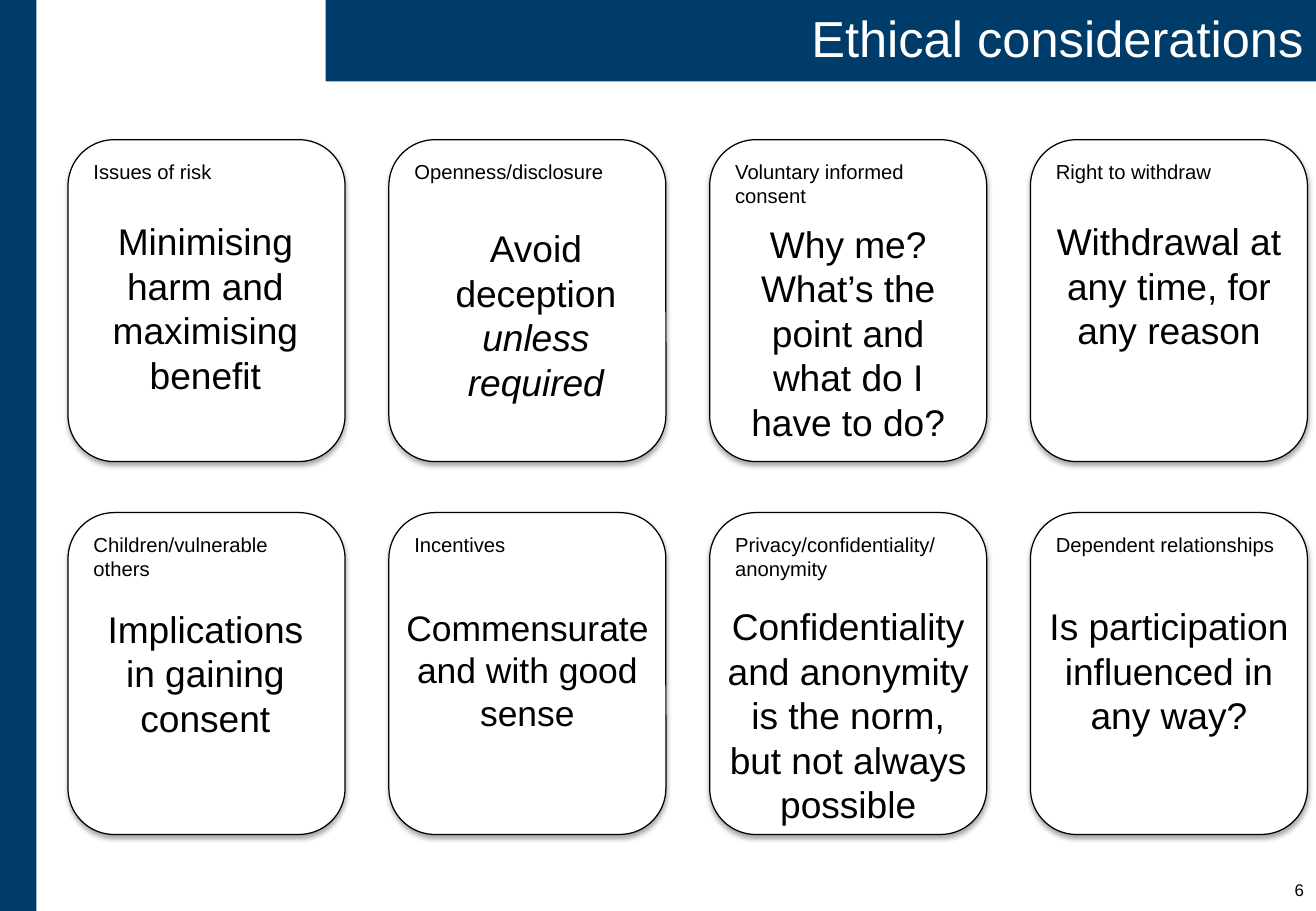
import pptx
import pptx.dml.color
import pptx.enum.shapes
import pptx.enum.text
import pptx.util
import lxml.etree

Inches, Pt = pptx.util.Inches, pptx.util.Pt
RGB = pptx.dml.color.RGBColor.from_string
SHAPE = pptx.enum.shapes.MSO_SHAPE
ALIGN = pptx.enum.text.PP_ALIGN
ANCHOR = pptx.enum.text.MSO_ANCHOR
FIT = pptx.enum.text.MSO_AUTO_SIZE

THEME = {"font": "Arial", "navy": "003C69", "white": "FFFFFF", "black": "000000",
         "title": 30, "note": 22, "label": 12, "number": 10}
W, H = 10.83, 7.5

# Card grid
LEFT, TOP = 0.56, 1.15
COL, ROW = 2.64, 3.07
CARD_W, CARD_H = 2.28, 2.65

# Label, note runs (text, italic), note offset in card, note width, lines, size
CARDS = [
    ("Issues of risk", [("Minimising harm and maximising benefit", False)],
     0.07, 0.6, 2.12, 4, THEME["note"]),
    ("Openness/disclosure", [("Avoid deception ", False), ("unless required", True)],
     0.15, 0.66, 2.12, 4, THEME["note"]),
    ("Voluntary informed consent",
     [("Why me? What’s the point and what do I have to do?", False)],
     0.08, 0.62, 2.12, 5, THEME["note"]),
    ("Right to withdraw", [("Withdrawal at any time, for any reason", False)],
     0.08, 0.6, 2.12, 3, THEME["note"]),
    ("Children/vulnerable others", [("Implications in gaining consent", False)],
     0.07, 0.72, 2.12, 3, THEME["note"]),
    ("Incentives", [("Commensurate and with good sense", False)],
     0, 0.72, CARD_W, 3, THEME["note"] - 1),
    ("Privacy/confidentiality/anonymity",
     [("Confidentiality and anonymity is the norm, but not always possible", False)],
     0, 0.7, CARD_W, 5, THEME["note"]),
    ("Dependent relationships", [("Is participation influenced in any way?", False)],
     0, 0.7, CARD_W, 3, THEME["note"]),
]

SHADOW = """<a:outerShdw xmlns:a="http://schemas.openxmlformats.org/drawingml/2006/main"
 blurRad="%d" dist="%d" dir="5400000" rotWithShape="0">
<a:srgbClr val="%s"><a:alpha val="35000"/></a:srgbClr></a:outerShdw>""" % (
    Pt(3.1), Pt(1.8), THEME["black"])


def write(sp, runs, size, align, color="black", **frame):
    tf = sp.text_frame
    for name, value in {"word_wrap": True, "auto_size": FIT.NONE,
                        "vertical_anchor": ANCHOR.TOP, **frame}.items():
        setattr(tf, name, value)
    p = tf.paragraphs[0]
    p.alignment = align
    for text, italic in runs:
        r = p.add_run()
        r.text = text
        for name, value in {"name": THEME["font"], "size": Pt(size),
                            "italic": italic}.items():
            setattr(r.font, name, value)
        r.font.color.rgb = RGB(THEME[color])
    return p


def add_box(shape, x, y, w, h, fill):
    sp = s.shapes.add_shape(shape, Inches(x), Inches(y), Inches(w), Inches(h))
    sp.shadow.inherit = False
    sp.fill.solid()
    sp.fill.fore_color.rgb = RGB(THEME[fill])
    sp.line.fill.background()
    return sp


prs = pptx.Presentation()
prs.slide_width, prs.slide_height = Inches(W), Inches(H)
s = prs.slides.add_slide(prs.slide_layouts[5])

# Side band
add_box(SHAPE.RECTANGLE, 0, 0, 0.3, H, "navy")

# Title bar
title = s.shapes.title
for name, value in {"left": 2.68, "top": 0, "width": W - 2.68, "height": 0.67}.items():
    setattr(title, name, Inches(value))
title.fill.solid()
title.fill.fore_color.rgb = RGB(THEME["navy"])
p = write(title, [("Ethical considerations", False)], THEME["title"], ALIGN.RIGHT, "white",
          vertical_anchor=ANCHOR.MIDDLE, margin_left=Inches(0.08),
          margin_right=Inches(0.1), margin_top=Inches(0.04), margin_bottom=Inches(0.04))
p.line_spacing = 0.9

# Cards with their notes
for i, (label, note, dx, dy, note_w, lines, size) in enumerate(CARDS):
    row, col = divmod(i, 4)
    x, y = LEFT + col * COL, TOP + row * ROW
    card = add_box(SHAPE.ROUNDED_RECTANGLE, x, y, CARD_W, CARD_H, "white")
    card.line.color.rgb = RGB(THEME["black"])
    card.line.width = Pt(0.75)
    effects = card._element.spPr.find(pptx.oxml.ns.qn("a:effectLst"))
    effects.append(lxml.etree.fromstring(SHADOW))
    write(card, [(label, False)], THEME["label"], ALIGN.LEFT)

    note_h = 0.1 + lines * size * 1.21 / 72
    tb = s.shapes.add_textbox(Inches(x + dx), Inches(y + dy), Inches(note_w), Inches(note_h))
    write(tb, note, size, ALIGN.CENTER, auto_size=FIT.SHAPE_TO_FIT_TEXT)

# Slide number
tb = s.shapes.add_textbox(Inches(W - 0.87), Inches(H - 0.31), Inches(0.87), Inches(0.31))
write(tb, [("6", False)], THEME["number"], ALIGN.RIGHT)

prs.save("out.pptx")
